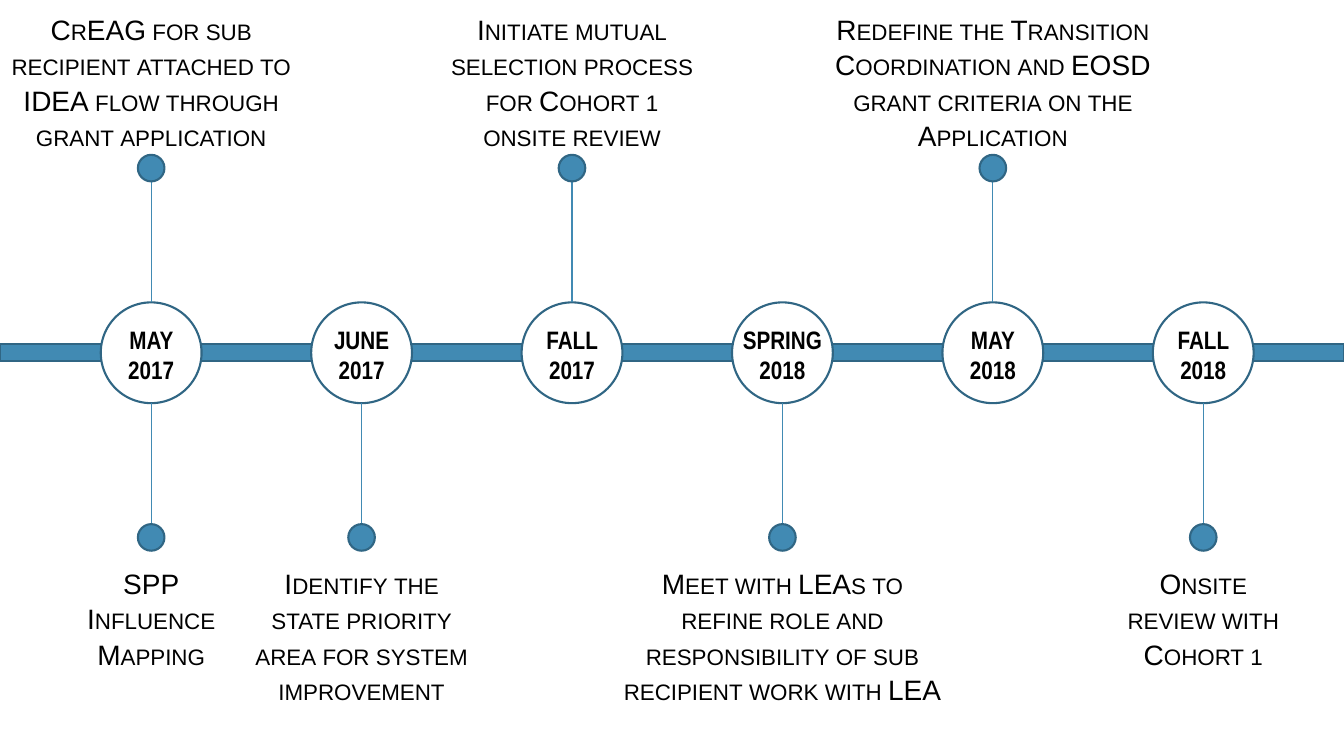
from lxml.etree import SubElement
from pptx import Presentation
from pptx.dml.color import RGBColor
from pptx.enum.shapes import MSO_CONNECTOR as Connector, MSO_SHAPE as Shape
from pptx.enum.text import PP_ALIGN as Align
from pptx.oxml.ns import qn
from pptx.util import Pt

COLOURS = {"blue": "418AB3", "edge": "306684", "white": "FFFFFF", "black": "000000"}
WIDTH, HEIGHT = 960, 540
AXIS = 252
FIRST_CENTRE, PITCH = 108, 150.3
CIRCLE, DOT, STEM, BAR = 72, 19, 86.4, 12.4

# Date, then (caption, width) above and below the axis
MILESTONES = [
    ("MAY 2017",
     ("CrEAG for sub recipient attached to IDEA flow through grant application", 222.5),
     ("SPP Influence Mapping", 111.6)),
    ("JUNE\n2017", None,
     ("Identify the state priority area for system improvement", 167)),
    ("FALL 2017",
     ("Initiate mutual selection process for Cohort 1 onsite review", 190), None),
    ("SPRING\v2018", None,
     ("Meet with LEAs to refine role and responsibility of sub recipient work with LEA", 247)),
    ("MAY\n2018",
     ("Redefine the Transition Coordination and EOSD grant criteria on the Application", 245.5),
     None),
    ("FALL 2018", None, ("Onsite review with Cohort 1", 126)),
]


def colour(name):
    return RGBColor.from_string(COLOURS[name])


def add_outlined(page, kind, left, top, width, height, fill):
    shape = page.shapes.add_shape(kind, Pt(left), Pt(top), Pt(width), Pt(height))
    shape.shadow.inherit = False
    shape.fill.solid()
    shape.fill.fore_color.rgb = colour(fill)
    shape.line.color.rgb = colour("edge")
    shape.line.width = Pt(1.5)


def add_text(page, text, centre, top, width, height, font, size,
             bold=False, small_caps=False, spacing=1.0):
    box = page.shapes.add_textbox(Pt(centre - width / 2), Pt(top), Pt(width), Pt(height))
    frame = box.text_frame
    frame.word_wrap = True
    frame.text = text
    for para in frame.paragraphs:
        para.alignment = Align.CENTER
        para.line_spacing = spacing
        para.font.name = font
        para.font.size = Pt(size)
        para.font.bold = bold
        para.font.color.rgb = colour("black")
        if small_caps:
            for span in para.runs:
                span.font._element.set("cap", "small")


def add_stem(page, centre, start, end):
    stem = page.shapes.add_connector(
        Connector.STRAIGHT, Pt(centre), Pt(start), Pt(centre), Pt(end))
    stem.line.color.rgb = colour("blue")
    stem.line.width = Pt(0.79)
    SubElement(stem._element.spPr, qn("a:effectLst"))


def add_branch(page, centre, caption, side):
    """Draw a stem, dot and caption; side is -1 above the axis and 1 below."""
    text, width = caption
    start = AXIS + side * CIRCLE / 2
    end = start + side * STEM
    add_stem(page, centre, start, end)
    dot_top = end + side * DOT / 2 - DOT / 2
    add_outlined(page, Shape.OVAL, centre - DOT / 2, dot_top, DOT, DOT, "blue")
    text_top = 4.3 if side < 0 else 400
    add_text(page, text, centre, text_top, width, 104.4, "Arial", 20,
             small_caps=True, spacing=1.05)


def add_milestone(page, centre, date, above, below):
    add_outlined(page, Shape.OVAL, centre - CIRCLE / 2, AXIS - CIRCLE / 2,
                 CIRCLE, CIRCLE, "white")
    add_text(page, date, centre, 228.2, CIRCLE, 51, "Arial Narrow", 18, bold=True)
    for caption, side in ((above, -1), (below, 1)):
        if caption:
            add_branch(page, centre, caption, side)


def add_timeline(page):
    add_outlined(page, Shape.RECTANGLE, 0, AXIS - BAR / 2, WIDTH, BAR, "blue")
    for index, (date, above, below) in enumerate(MILESTONES):
        add_milestone(page, FIRST_CENTRE + index * PITCH, date, above, below)


def main():
    deck = Presentation()
    deck.slide_width, deck.slide_height = Pt(WIDTH), Pt(HEIGHT)
    page = deck.slides.add_slide(deck.slide_layouts[6])
    add_timeline(page)
    deck.save("out.pptx")


if __name__ == "__main__":
    main()
